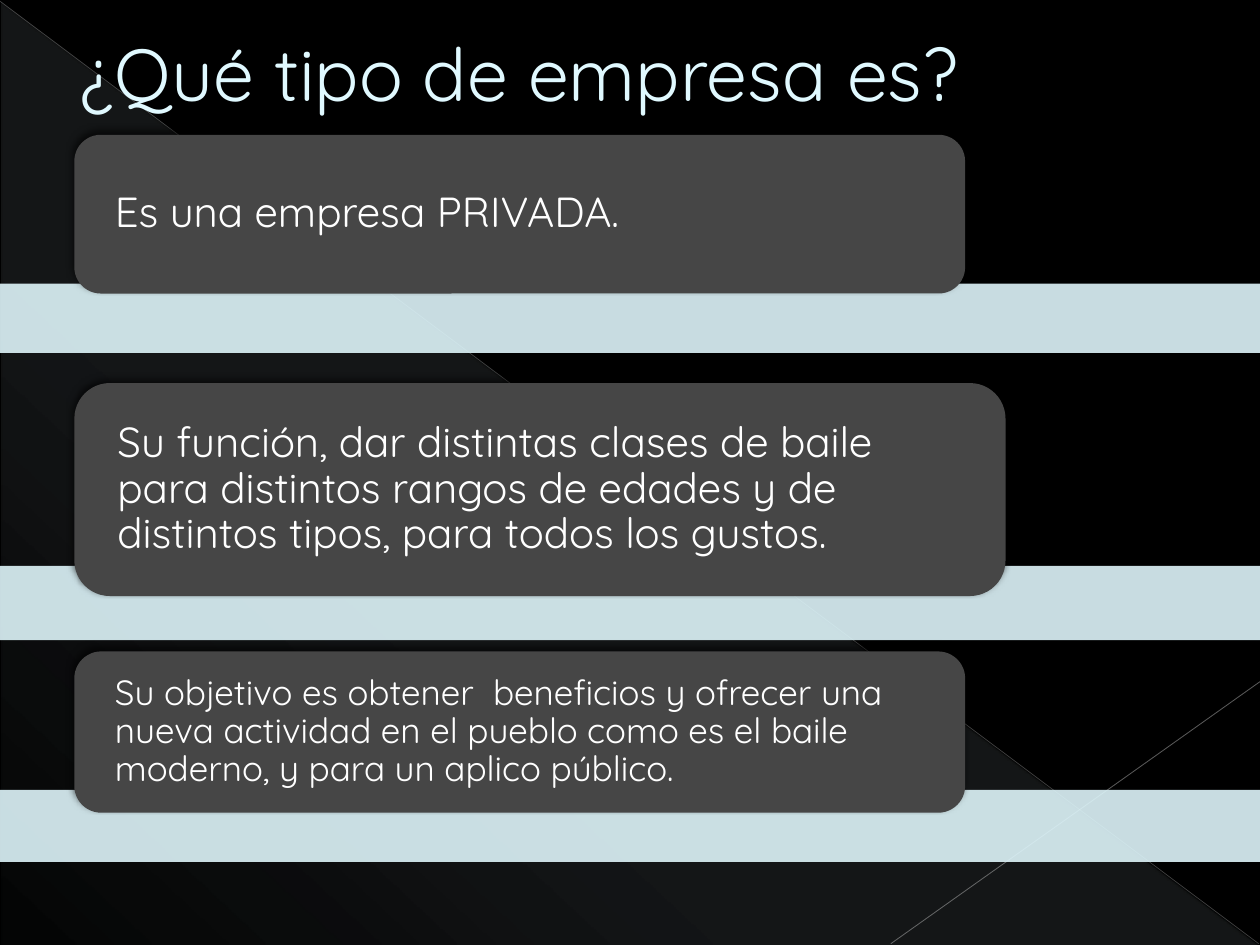
"""Build the slide that describes the type of company as three cards over bands."""
import pptx
import pptx.dml.color
import pptx.enum.shapes
import pptx.enum.text
import pptx.oxml
import pptx.oxml.ns
import pptx.util
from pptx.util import Inches, Pt

RGBColor = pptx.dml.color.RGBColor
SHAPE = pptx.enum.shapes.MSO_SHAPE
ALIGN = pptx.enum.text.PP_ALIGN
ANCHOR = pptx.enum.text.MSO_ANCHOR
qn = pptx.oxml.ns.qn

BLACK = RGBColor(0x00, 0x00, 0x00)
WHITE = RGBColor(0xFF, 0xFF, 0xFF)
ICE = RGBColor(0xDE, 0xF5, 0xFA)
TITLE_COLOR = RGBColor(0xE0, 0xF9, 0xFF)
TITLE_EDGE = RGBColor(0x9A, 0xAA, 0xAD)
CARD_GREY = RGBColor(0x46, 0x46, 0x46)
FONT = "Quicksand"
WIDTH, HEIGHT = 10, 7.5
CARD_LEFT, CARD_INSET = 0.59, 0.26

TITLE = "¿Qué tipo de empresa es?"
CARDS = [
    dict(text="Es una empresa PRIVADA.", size=24,
         top=1.07, width=7.07, height=1.26, band=(2.25, 0.55)),
    dict(text="Su función, dar distintas clases de baile para distintos rangos "
              "de edades y de distintos tipos, para todos los gustos.", size=24,
         top=3.04, width=7.39, height=1.69, band=(4.49, 0.59)),
    dict(text="Su objetivo es obtener  beneficios y ofrecer una nueva actividad "
              "en el pueblo como es el baile moderno, y para un aplico público.", size=20,
         top=5.17, width=7.07, height=1.28, band=(6.27, 0.57)),
]
LINES = [
    ((0, 0.01), (9.99, 7.49), RGBColor(0xB9, 0xB9, 0xB9), 0.39, 35),
    ((10, 5.41), (7.07, 7.49), RGBColor(0xC1, 0xC1, 0xC1), 0.47, 45),
]
GRADIENT = [(0, 10), (70, 8), (100, 1)]
GRADIENT_ANGLE = 133


def xml(markup):
    root, rest = markup.split(">", 1)
    slash = "/" if root.endswith("/") else ""
    return pptx.oxml.parse_xml(f"{root.rstrip('/')} {pptx.oxml.ns.nsdecls('a')}{slash}>{rest}")


def set_alpha(parent, percent):
    color = next(parent.iter(qn("a:srgbClr")))
    color.append(xml(f'<a:alpha val="{percent * 1000}"/>'))


def add_shape(slide, kind, left, top, width, height, color):
    sp = slide.shapes.add_shape(kind, Inches(left), Inches(top), Inches(width), Inches(height))
    sp.shadow.inherit = False
    sp.line.fill.background()
    sp.fill.solid()
    sp.fill.fore_color.rgb = color
    return sp


def add_backdrop(slide):
    sp = add_shape(slide, SHAPE.RIGHT_TRIANGLE, 0.01, 0.02, 9.98, 7.48, ICE)
    stops = "".join(
        f'<a:gs pos="{pos * 1000}"><a:srgbClr val="{ICE}"><a:alpha val="{alpha * 1000}"/>'
        "</a:srgbClr></a:gs>" for pos, alpha in GRADIENT)
    solid = sp._element.spPr.find(qn("a:solidFill"))
    solid.getparent().replace(solid, xml(
        f'<a:gradFill><a:gsLst>{stops}</a:gsLst>'
        f'<a:lin ang="{GRADIENT_ANGLE * 60000}" scaled="0"/></a:gradFill>'))
    for start, end, color, weight, alpha in LINES:
        line = slide.shapes.add_connector(
            pptx.enum.shapes.MSO_CONNECTOR.STRAIGHT, *map(Inches, start + end))
        line.line.color.rgb = color
        line.line.width = Pt(weight)
        sp_pr = line._element.spPr
        set_alpha(sp_pr, alpha)
        sp_pr.append(xml("<a:effectLst/>"))


def write(sp, text, size, color):
    tf = sp.text_frame
    tf.text = text
    tf.word_wrap = True
    tf.vertical_anchor = ANCHOR.MIDDLE
    p = tf.paragraphs[0]
    p.alignment = ALIGN.LEFT
    r = p.runs[0]
    r.font.name = FONT
    r.font.size = Pt(size)
    r.font.color.rgb = color
    return p


def add_title(slide):
    sp = slide.shapes.title
    sp.left, sp.top, sp.width, sp.height = map(Inches, (0, -0.19, 9, 1.53))
    p = write(sp, TITLE, 42, TITLE_COLOR)
    p_pr = p._p.get_or_add_pPr()
    p_pr.set("marL", str(Inches(0.53)))
    p_pr.set("indent", "0")
    p.runs[0].font._element.insert(0, xml(
        f'<a:ln w="{Pt(0.5)}"><a:solidFill><a:srgbClr val="{TITLE_EDGE}"/></a:solidFill></a:ln>'))
    slide.shapes._spTree.append(sp._element)


def add_card(slide, card):
    band_top, band_height = card["band"]
    band = add_shape(slide, SHAPE.RECTANGLE, 0, band_top, WIDTH, band_height, ICE)
    set_alpha(band._element.spPr, 90)
    sp = add_shape(slide, SHAPE.ROUNDED_RECTANGLE, CARD_LEFT, card["top"],
                   card["width"], card["height"], CARD_GREY)
    sp._element.spPr.find(qn("a:effectLst")).append(xml(
        f'<a:outerShdw blurRad="{Pt(4)}" dist="{Pt(3)}" dir="{245 * 60000}" rotWithShape="0">'
        f'<a:srgbClr val="{BLACK}"><a:alpha val="60000"/></a:srgbClr></a:outerShdw>'))
    p = write(sp, card["text"], card["size"], WHITE)
    p.line_spacing = 0.9
    tf = sp.text_frame
    tf.margin_left = tf.margin_right = Inches(CARD_INSET)
    tf.margin_top = tf.margin_bottom = 0


def main():
    prs = pptx.Presentation()
    prs.slide_width, prs.slide_height = Inches(WIDTH), Inches(HEIGHT)
    slide = prs.slides.add_slide(prs.slide_layouts[5])
    slide.background.fill.solid()
    slide.background.fill.fore_color.rgb = BLACK
    add_backdrop(slide)
    add_title(slide)
    for card in CARDS:
        add_card(slide, card)
    prs.save("out.pptx")


if __name__ == "__main__":
    main()
